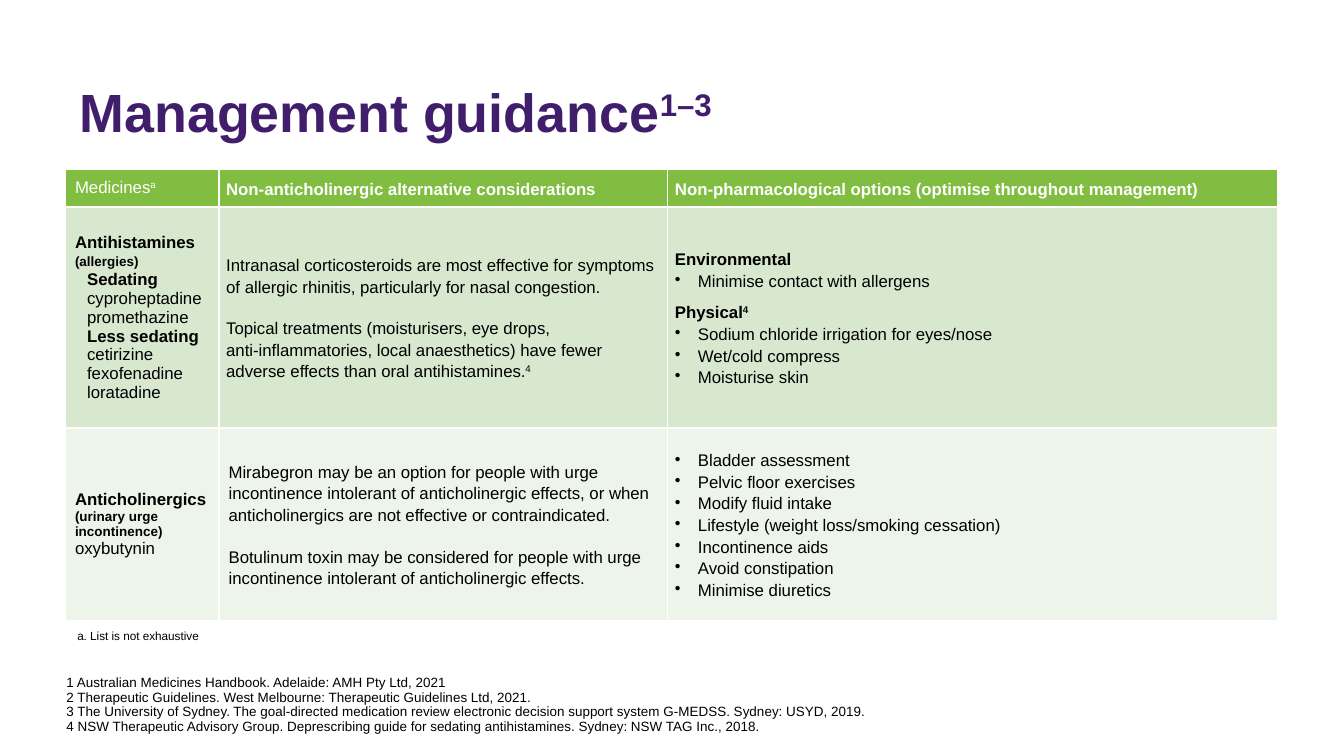
from copy import deepcopy
from pptx import Presentation
from pptx.dml.color import RGBColor
from pptx.enum.text import MSO_ANCHOR
from pptx.oxml import parse_xml
from pptx.oxml.ns import nsdecls
from pptx.util import Inches, Pt

COLORS = {
    "title": "401E6C", "text": "000000", "white": "FFFFFF",
    "header": "81BD41", "antihistamines": "D8E8CF", "anticholinergics": "EDF4E9",
}
BOLD = {"bold": True}
SMALL = {"bold": True, "size": 8}
SUPER = {"raised": True}


def write(frame, paragraphs, size=10, color="text", bold=False, line=1.0, before=0, after=0,
          margins=(0.1, 0.05), anchor=MSO_ANCHOR.MIDDLE):
    frame.word_wrap = True
    frame.vertical_anchor = anchor
    frame.margin_left = frame.margin_right = Inches(margins[0])
    frame.margin_top = frame.margin_bottom = Inches(margins[1])
    for index, (runs, layout) in enumerate(paragraphs):
        paragraph = frame.paragraphs[0] if index == 0 else frame.add_paragraph()
        properties = paragraph._p.get_or_add_pPr()
        bullet = layout.get("bullet", False)
        properties.set("marL", str(Inches(0.19 if bullet else layout.get("indent", 0))))
        properties.set("indent", str(Inches(-0.19 if bullet else 0)))
        if bullet:
            properties.append(parse_xml(f'<a:buChar {nsdecls("a")} char="•"/>'))
        paragraph.line_spacing = line
        paragraph.space_before = Pt(before if index else 0)
        paragraph.space_after = Pt(layout.get("after", after))
        for text, style in runs:
            for part_index, part in enumerate(text.split("\n")):
                if part_index:
                    paragraph.add_line_break()
                    paragraph._p[-1].append(deepcopy(run._r.rPr))
                run = paragraph.add_run()
                run.text = part
                run.font.name = "Arial"
                run.font.size = Pt(style.get("size", size))
                run.font.bold = style.get("bold", bold)
                run.font.color.rgb = RGBColor.from_string(COLORS[color])
                if style.get("raised"):
                    run._r.rPr.set("baseline", "30000")


def plain(*lines, **layout):
    return [([(text, {})], layout) for text in lines]


prs = Presentation()
prs.slide_width, prs.slide_height = Inches(11.11), Inches(6.25)
slide = prs.slides.add_slide(prs.slide_layouts[6])

title = slide.shapes.add_textbox(Inches(0.56), Inches(0.25), Inches(8.82), Inches(0.99))
write(title.text_frame, [([("Management guidance", {}), ("1–3", SUPER)], {})],
      size=32, color="title", bold=True, line=0.9, anchor=MSO_ANCHOR.BOTTOM)

references = slide.shapes.add_textbox(Inches(0.55), Inches(5.59), Inches(7.97), Inches(0.48))
write(references.text_frame, plain(
    "1 Australian Medicines Handbook. Adelaide: AMH Pty Ltd, 2021",
    "2 Therapeutic Guidelines. West Melbourne: Therapeutic Guidelines Ltd, 2021.",
    "3 The University of Sydney. The goal-directed medication review electronic decision support "
    "system G-MEDSS. Sydney: USYD, 2019.",
    "4 NSW Therapeutic Advisory Group. Deprescribing guide for sedating antihistamines. "
    "Sydney: NSW TAG Inc., 2018.",
), size=8, line=0.9, margins=(0, 0), anchor=MSO_ANCHOR.BOTTOM)

guidance = [
    ("header", [
        [([("Medicines", {}), ("a", SUPER)], {"after": 6})],
        [([("Non-anticholinergic alternative considerations", BOLD)], {})],
        [([("Non-pharmacological options (optimise throughout management)", BOLD)], {})],
    ]),
    ("antihistamines", [
        [
            ([("Antihistamines", BOLD)], {}),
            ([("(allergies)", SMALL), (" ", BOLD)], {}),
            ([("Sedating", BOLD), (" cyproheptadine promethazine", {})], {"indent": 0.1}),
            ([("Less sedating ", BOLD), ("cetirizine fexofenadine loratadine", {})], {"indent": 0.1}),
        ],
        plain("Intranasal corticosteroids are most effective for symptoms of allergic rhinitis, "
              "particularly for nasal congestion.", after=6)
        + [([("Topical treatments (moisturisers, eye drops,\nanti-inflammatories, local anaesthetics) "
              "have fewer adverse effects than oral antihistamines.", {}), ("4", SUPER)], {"after": 6})],
        [([("Environmental", BOLD)], {})]
        + plain("Minimise contact with allergens", bullet=True, after=6)
        + [([("Physical", BOLD), ("4", {"bold": True, "raised": True})], {})]
        + plain("Sodium chloride irrigation for eyes/nose", "Wet/cold compress", "Moisturise skin",
                bullet=True),
    ]),
    ("anticholinergics", [
        [([("Anticholinergics\n", BOLD), ("(urinary urge incontinence) ", SMALL),
           ("oxybutynin", {})], {"after": 6})],
        plain("Mirabegron may be an option for people with urge incontinence intolerant of "
              "anticholinergic effects, or when anticholinergics are not effective or contraindicated.",
              "Botulinum toxin may be considered for people with urge incontinence intolerant of "
              "anticholinergic effects.", after=6),
        plain("Bladder assessment", "Pelvic floor exercises", "Modify fluid intake",
              "Lifestyle (weight loss/smoking cessation)", "Incontinence aids", "Avoid constipation",
              "Minimise diuretics", bullet=True),
    ]),
]
table = slide.shapes.add_table(3, 3, Inches(0.54), Inches(1.4), Inches(10.02), Inches(3.73)).table
table.first_row = table.horz_banding = False
for column, width in zip(table.columns, (1.27, 3.71, 5.04)):
    column.width = Inches(width)
for row, height in zip(table.rows, (0.31, 1.83, 1.59)):
    row.height = Inches(height)

for row_index, (band, contents) in enumerate(guidance):
    for column_index, paragraphs in enumerate(contents):
        cell = table.cell(row_index, column_index)
        roomy = column_index == 0 or (row_index, column_index) == (2, 1)
        margins = (0.08, 0.04) if roomy else (0.06, 0)
        write(cell.text_frame, paragraphs, color="white" if band == "header" else "text",
              line=1.15 if column_index else 1.0,
              before=6 if column_index == 1 else 0)
        cell.vertical_anchor = MSO_ANCHOR.MIDDLE
        cell.margin_left = cell.margin_right = Inches(margins[0])
        cell.margin_top = cell.margin_bottom = Inches(margins[1])
        cell_properties = cell._tc.get_or_add_tcPr()
        for side in ("lnL", "lnR", "lnT", "lnB"):
            cell_properties.append(parse_xml(
                f'<a:{side} {nsdecls("a")} w="{Pt(1)}"><a:solidFill>'
                f'<a:srgbClr val="{COLORS["white"]}"/></a:solidFill></a:{side}>'))
        cell.fill.solid()
        cell.fill.fore_color.rgb = RGBColor.from_string(COLORS[band])

footnote = slide.shapes.add_textbox(Inches(0.54), Inches(5.13), Inches(10.02), Inches(0.22))
write(footnote.text_frame, plain("a. List is not exhaustive"), size=7, line=1.15,
      anchor=MSO_ANCHOR.TOP)

prs.save("out.pptx")
